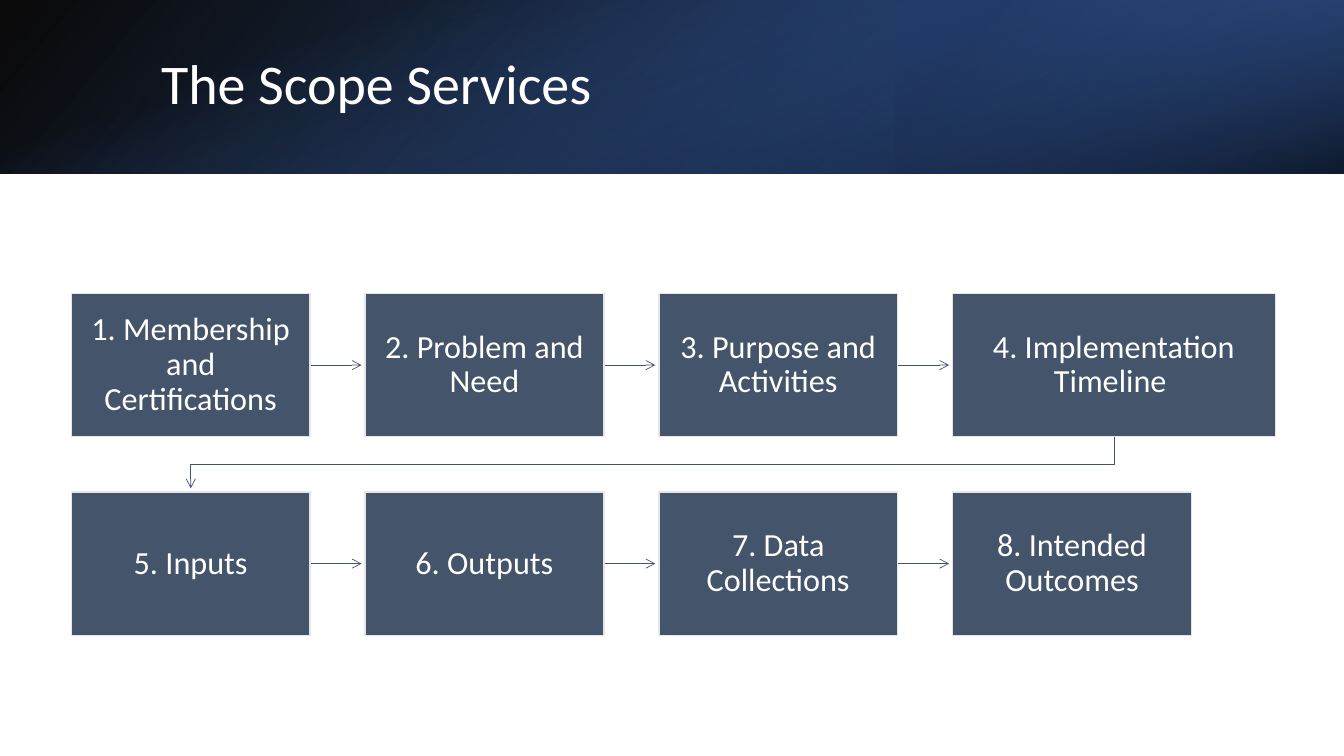
"""Build the scope of services slide: a title band over an eight-step flow."""
from lxml import etree
from pptx import Presentation
from pptx.dml.color import RGBColor
from pptx.enum import shapes, text
from pptx.oxml import ns
from pptx.util import Pt

WHITE = RGBColor(0xFF, 0xFF, 0xFF)
BLACK = RGBColor(0x00, 0x00, 0x00)
SLATE = RGBColor(0x44, 0x54, 0x6A)
PALE = RGBColor(0xE7, 0xE6, 0xE6)
BLUE = RGBColor(0x44, 0x72, 0xC4)
DEEP = RGBColor(0x2F, 0x55, 0x97)
NAVY = RGBColor(0x20, 0x38, 0x64)

WIDE, TALL, BAND = 960, 540, 123.84
LEFT, TOP = 51, 209.6
BOX_W, BOX_H, LAST_W = 170.6, 102.4, 230.4
STEP_X, STEP_Y = 209.85, 141.8
TIP = 2.6

STEPS = [
    ["1. Membership and Certifications", "2. Problem and Need",
     "3. Purpose and Activities", "4. Implementation Timeline "],
    ["5. Inputs", "6. Outputs", "7. Data Collections", "8. Intended Outcomes"],
]


class Deck:
    """Hold the style and the current slide."""

    font = "Calibri"

    def __init__(self):
        self.prs = Presentation()
        self.prs.slide_width, self.prs.slide_height = Pt(WIDE), Pt(TALL)
        self.slide = self.prs.slides.add_slide(self.prs.slide_layouts[6])

    def rect(self, x, y, w, h):
        """Add a plain rectangle without shadow."""
        box = self.slide.shapes.add_shape(
            shapes.MSO_SHAPE.RECTANGLE, Pt(x), Pt(y), Pt(w), Pt(h))
        box.shadow.inherit = False
        return box

    def fade(self, x, y, w, h, angle, stops, turn=0, flip=False):
        """Add a rectangle with a see-through gradient."""
        box = self.rect(x, y, w, h)
        box.line.fill.background()
        box.rotation = turn
        props = box._element.spPr
        if flip:
            props.find(ns.qn("a:xfrm")).set("flipH", "1")
        grad = etree.Element(ns.qn("a:gradFill"), rotWithShape="1")
        marks = etree.SubElement(grad, ns.qn("a:gsLst"))
        for pos, color, alpha in stops:
            mark = etree.SubElement(marks, ns.qn("a:gs"), pos=str(pos * 1000))
            tint = etree.SubElement(mark, ns.qn("a:srgbClr"), val=str(color))
            etree.SubElement(tint, ns.qn("a:alpha"), val=str(alpha * 1000))
        etree.SubElement(grad, ns.qn("a:lin"), ang=str(angle * 60000), scaled="0")
        props.find(ns.qn("a:prstGeom")).addnext(grad)

    def label(self, shape, words, size, align, inset):
        """Put one run of white text into a shape."""
        frame = shape.text_frame
        frame.word_wrap = True
        frame.vertical_anchor = text.MSO_ANCHOR.MIDDLE
        frame.margin_left = frame.margin_right = Pt(inset)
        para = frame.paragraphs[0]
        para.alignment = align
        para.line_spacing = 0.9
        run = para.add_run()
        run.text = words
        run.font.name = self.font
        run.font.size = Pt(size)
        run.font.color.rgb = WHITE

    def title(self, words, x, y, w, h):
        """Add the slide title."""
        box = self.slide.shapes.add_textbox(Pt(x), Pt(y), Pt(w), Pt(h))
        self.label(box, words, 40, text.PP_ALIGN.LEFT, 7.2)

    def card(self, words, x, y, w, h):
        """Add one step of the flow."""
        box = self.rect(x, y, w, h)
        box.fill.solid()
        box.fill.fore_color.rgb = SLATE
        box.line.color.rgb = PALE
        box.line.width = Pt(1)
        self.label(box, words, 23, text.PP_ALIGN.CENTER, 8.4)

    def ink(self, shape):
        """Style a line and give it an open arrowhead."""
        shape.line.color.rgb = SLATE
        shape.line.width = Pt(0.5)
        edge = shape._element.spPr.find(ns.qn("a:ln"))
        etree.SubElement(edge, ns.qn("a:tailEnd"), type="arrow")

    def arrow(self, x, y, end):
        """Add a level arrow."""
        line = self.slide.shapes.add_connector(
            shapes.MSO_CONNECTOR.STRAIGHT, Pt(x), Pt(y), Pt(end), Pt(y))
        self.ink(line)
        etree.SubElement(line._element.spPr, ns.qn("a:effectLst"))

    def bend(self, points):
        """Add an arrow that turns corners."""
        spots = [(Pt(x), Pt(y)) for x, y in points]
        form = self.slide.shapes.build_freeform(*spots[0])
        form.add_line_segments(spots[1:], close=False)
        shape = form.convert_to_shape()
        shape.shadow.inherit = False
        shape.fill.background()
        self.ink(shape)


def main():
    deck = Deck()
    deck.fade(0, 0, WIDE, BAND, 140, [(0, BLACK, 96), (100, DEEP, 100)], flip=True)
    deck.fade(WIDE * 2 / 3, 0, WIDE / 3, BAND, 320,
              [(19, NAVY, 68), (100, BLUE, 79)], turn=180, flip=True)
    deck.fade((WIDE - BAND) / 2, (BAND - WIDE) / 2, BAND, WIDE, 340,
              [(23, BLUE, 0), (99, BLACK, 74)], turn=90)
    deck.title("The Scope Services", 108, 27.4, 790.6, 69.1)

    for row, names in enumerate(STEPS):
        y = TOP + row * STEP_Y
        for col, name in enumerate(names):
            x = LEFT + col * STEP_X
            last = col == len(names) - 1
            if not last:
                deck.arrow(x + BOX_W, y + BOX_H / 2, x + STEP_X - TIP)
            deck.card(name, x, y, LAST_W if last and row == 0 else BOX_W, BOX_H)

    start = LEFT + 3 * STEP_X + LAST_W / 2
    goal = LEFT + BOX_W / 2
    base, floor = TOP + BOX_H, TOP + STEP_Y
    mid = (base + floor) / 2
    deck.bend([(start, base), (start, mid), (goal, mid), (goal, floor - TIP)])
    deck.prs.save("out.pptx")


if __name__ == "__main__":
    main()
